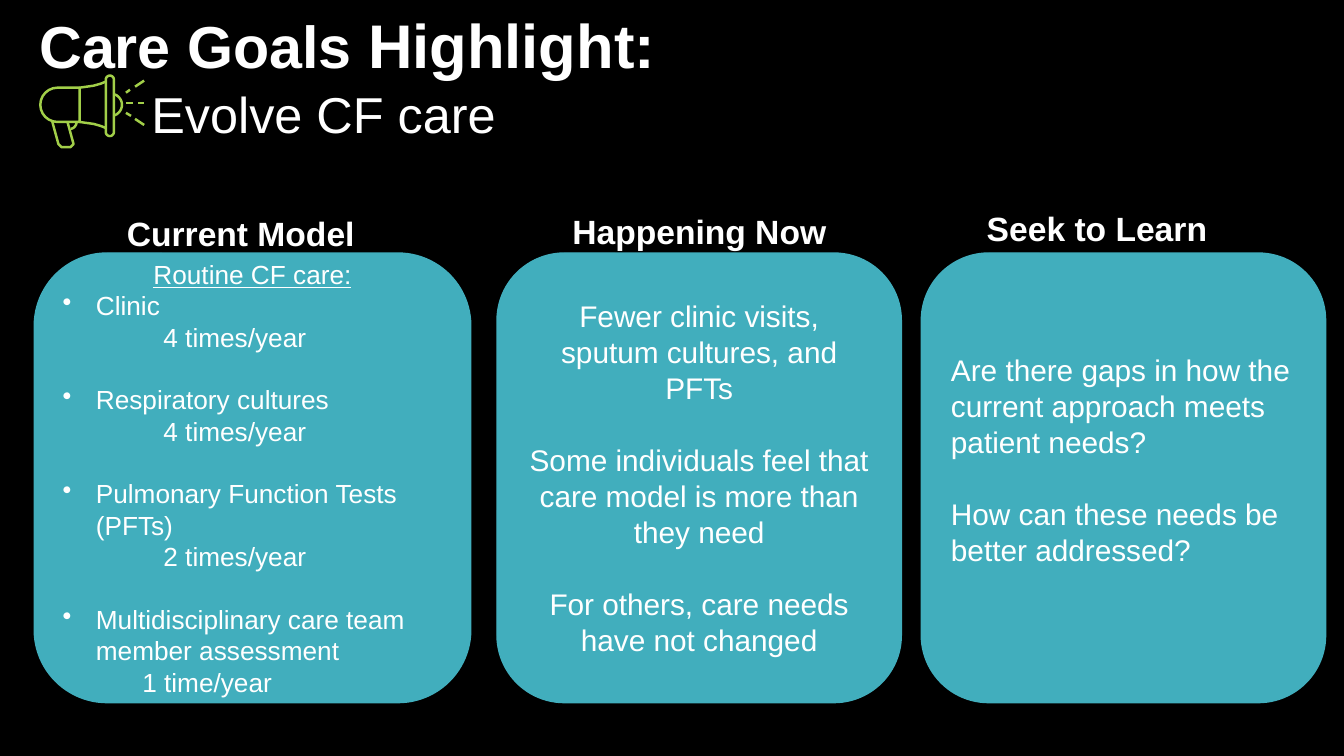
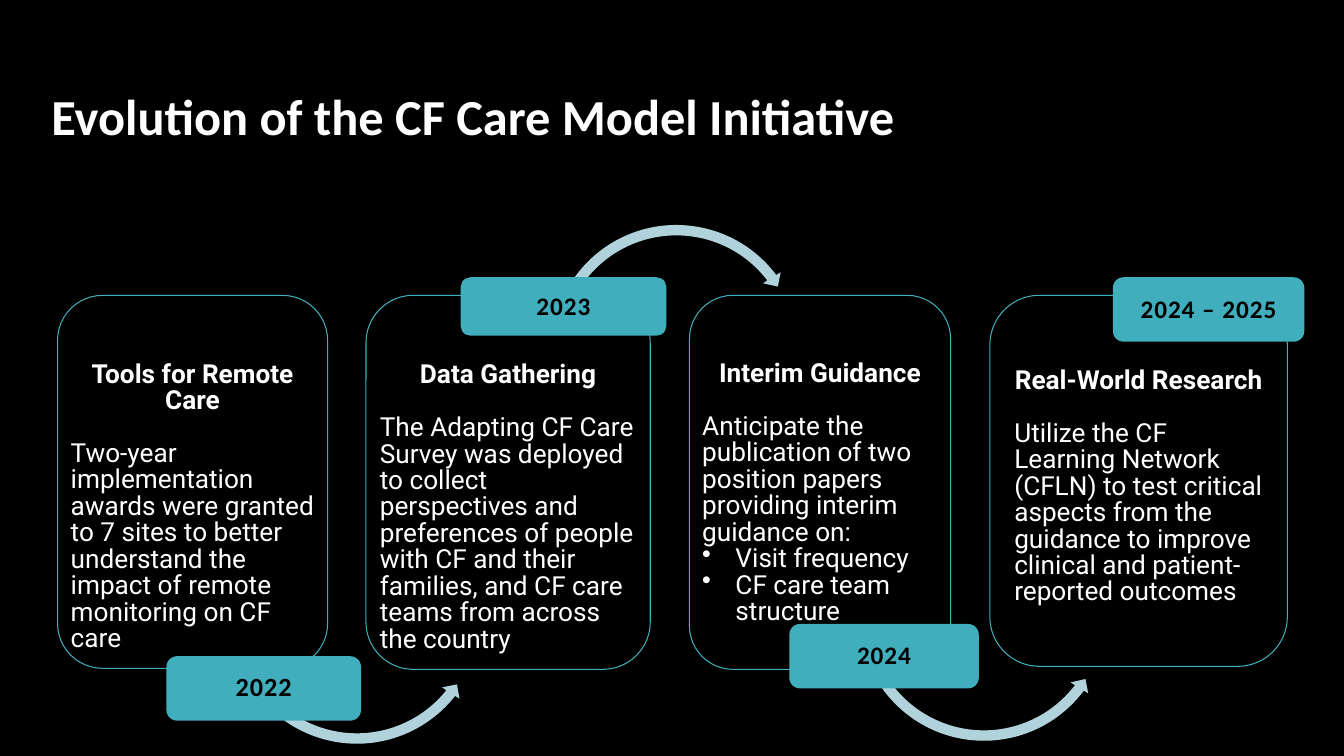
import math

from pptx import Presentation
from pptx import util as u
from pptx.dml import color
from pptx.enum import shapes, text
from pptx.oxml.xmlchemy import OxmlElement

# Shared look
colour = color.RGBColor.from_string
BLACK, WHITE, TEAL, MIST, LIME = "000000", "FFFFFF", "41AEBD", "B0D3DB", "A2CF49"
LEFT, CENTER = text.PP_ALIGN.LEFT, text.PP_ALIGN.CENTER
TOP, MIDDLE = text.MSO_ANCHOR.TOP, text.MSO_ANCHOR.MIDDLE
ROUNDED = shapes.MSO_SHAPE.ROUNDED_RECTANGLE
DEFAULT_INSETS, NO_INSETS = (0.1, 0.05, 0.1, 0.05), (0, 0, 0, 0)

deck = Presentation()
deck.slide_width, deck.slide_height = u.Inches(13.33), u.Inches(7.5)
backdrop = deck.slide_master.background.fill
backdrop.solid()
backdrop.fore_color.rgb = colour(BLACK)
title_only = deck.slide_layouts[5]


def place(shape, share, insets=DEFAULT_INSETS, anchor=TOP):
    """Put a shape at percentages of the slide and prepare its text frame."""
    left, top, width, height = share
    shape.left, shape.width = (int(deck.slide_width * n / 100) for n in (left, width))
    shape.top, shape.height = (int(deck.slide_height * n / 100) for n in (top, height))
    shape.shadow.inherit = False
    frame = shape.text_frame
    frame.word_wrap = True
    frame.auto_size = text.MSO_AUTO_SIZE.NONE
    frame.vertical_anchor = anchor
    (frame.margin_left, frame.margin_top,
     frame.margin_right, frame.margin_bottom) = (u.Inches(n) for n in insets)
    return frame


def write(frame, words, size, face="Arial", ink=WHITE, bold=False, underline=False,
          align=LEFT, pitch=None, gap=0, indent=0, bullet=False, para=None):
    """Add a span, in a new paragraph unless one is given."""
    if para is None:
        para = frame.add_paragraph() if frame.text else frame.paragraphs[0]
        para.alignment = align
        para.space_before = u.Pt(gap)
        if pitch:
            para.line_spacing = u.Pt(pitch)
        props = para._p.get_or_add_pPr()
        props.set("marL", str(u.Inches(indent)))
        props.set("indent", str(-u.Inches(indent) if bullet else 0))
        if bullet:
            mark = OxmlElement("a:buChar")
            mark.set("char", "•")
            props.append(mark)
    span = para.add_run()
    span.text = words
    span.font.size, span.font.name = u.Pt(size), face
    span.font.bold, span.font.underline = bold, underline
    span.font.color.rgb = colour(ink)
    return para


# Slide 1: title
page = deck.slides.add_slide(title_only)
frame = place(page.shapes.title, (2.93, 2.53, 86.25, 15.87), NO_INSETS)
first = write(frame, "Care Goals ", 42.3, bold=True, pitch=44.4)
write(frame, "Highlight:", 44, bold=True, para=first)
write(frame, "Evolve CF care", 36, pitch=44.4, indent=1.11)

# Megaphone: contours in inches, a five-number tuple is an arc (x, y, radius, from, to)
contours = [
    (True, [(0.79, 1.21), (0.57, 1.04, 0.17, 90, 270), (0.79, 0.87)]),
    (False, [(0.79, 0.87), (0.86, 0.86), (0.93, 0.85), (1, 0.83), (1.05, 0.81)]),
    (False, [(0.79, 1.21), (0.86, 1.22), (0.93, 1.23), (1, 1.25), (1.05, 1.27)]),
    (True, [(1.09, 0.79, 0.04, 180, 360), (1.09, 1.31, 0.04, 0, 180)]),
    (False, [(1.1, 1.04, 0.11, -70, 70)]),
    (False, [(0.52, 1.21), (0.58, 1.43), (0.61, 1.46), (0.7, 1.46), (0.73, 1.43), (0.67, 1.21)]),
    (False, [(0.69, 1.21, 0.07, 0, 80)]),
    (False, [(1.25, 0.92), (1.29, 0.89)]),
    (False, [(1.34, 0.86), (1.43, 0.8)]),
    (False, [(1.25, 1.02), (1.32, 1.02)]),
    (False, [(1.37, 1.02), (1.43, 1.02)]),
    (False, [(1.25, 1.12), (1.3, 1.15)]),
    (False, [(1.34, 1.18), (1.43, 1.24)]),
]
builder = None
for closed, parts in contours:
    points = []
    for part in parts:
        if len(part) == 2:
            points.append(part)
            continue
        x, y, radius, start, stop = part
        for step in range(13):
            angle = math.radians(start + (stop - start) * step / 12)
            points.append((x + radius * math.cos(angle), y + radius * math.sin(angle)))
    points = [(x * 1000, y * 1000) for x, y in points]
    if builder is None:
        builder = page.shapes.build_freeform(*points[0], scale=u.Inches(1) / 1000)
    else:
        builder.move_to(*points[0])
    builder.add_line_segments(points[1:], close=closed)
megaphone = builder.convert_to_shape()
megaphone.shadow.inherit = False
megaphone.fill.background()
megaphone.line.color.rgb = colour(LIME)
megaphone.line.width = u.Pt(1.75)

# Three columns: heading share, card left and width, insets, size, pitch, paragraphs
routine = [("Routine CF care:", dict(align=CENTER, underline=True))]
for number, (check, often, indent) in enumerate([
        ("Clinic", "4 times/year", 1),
        ("Respiratory cultures", "4 times/year", 1),
        ("Pulmonary Function Tests (PFTs)", "2 times/year", 1),
        ("Multidisciplinary care team member assessment", "1 time/year", 0.79)]):
    routine.append((check, dict(indent=0.33, bullet=True, gap=22.4 if number else 0)))
    routine.append((often, dict(indent=indent)))
now = [(words, dict(align=CENTER, gap=25.7 if number else 0)) for number, words in enumerate([
    "Fewer clinic visits, sputum cultures, and PFTs",
    "Some individuals feel that care model is more than they need",
    "For others, care needs have not changed"])]
learn = [
    ("Are there gaps in how the current approach meets patient needs?", {}),
    ("How can these needs be better addressed?", dict(gap=25.7)),
]
columns = [
    ("Current Model", (8.7, 27.47, 31.88, 6.67), 2.55, 32.48,
     (0.07, 0.03, 0.07, 0.03), 18.7, 22.4, routine),
    ("Happening Now", (41.85, 27.2, 24.75, 6.67), 36.98, 30.08,
     DEFAULT_INSETS, 21.3, 25.7, now),
    ("Seek to Learn", (72.68, 26.8, 22.58, 6.67), 68.55, 30.08,
     (0.1, 0.05, 0.1, 0.41), 21.3, 25.7, learn),
]
for heading, share, left, width, insets, size, pitch, lines in columns:
    card = page.shapes.add_shape(ROUNDED, 0, 0, 0, 0)
    card.fill.solid()
    card.fill.fore_color.rgb = card.line.color.rgb = colour(TEAL)
    card.line.width = u.Pt(1)
    frame = place(card, (left, 33.47, width, 59.47), insets, MIDDLE)
    for words, style in lines:
        write(frame, words, size, pitch=pitch, **style)
    label = page.shapes.add_textbox(0, 0, 0, 0)
    write(place(label, share), heading, 24, bold=True)

# Slide 2: title
page = deck.slides.add_slide(title_only)
frame = place(page.shapes.title, (3.83, 12, 71.85, 7.47), NO_INSETS)
write(frame, "Evolution of the CF Care Model Initiative", 36, "Calibri", bold=True, pitch=39.5)

# Curved arrows: left, top, rotation, flipped, head and tail angles
for left, top, turn, flipped, head, tail in [
        (40.65, 29.07, 5, True, 25.22, 89.78),
        (63.53, 64.27, 347.3, False, 29.81, 94.33),
        (16.88, 64.67, 356.3, False, 25.22, 89.78)]:
    arrow = page.shapes.add_shape(shapes.MSO_SHAPE.LEFT_CIRCULAR_ARROW, 0, 0, 0, 0)
    place(arrow, (left, top, 19.35, 34.4))
    arrow.rotation = turn
    if flipped:
        arrow.element.spPr.xfrm.set("flipV", "1")
    for index, value in enumerate((0.04, 3.09, head, tail, 0.04)):
        arrow.adjustments[index] = value
    arrow.fill.solid()
    arrow.fill.fore_color.rgb = colour(MIST)
    arrow.line.fill.background()

# Stage cards: left, width, height, insets, heading, body, bullets
stages = [
    (4.28, 20.1, 49.33, (0, 0.53, 0, 0), "Tools for Remote Care",
     "Two-year implementation awards were granted to 7 sites to better understand "
     "the impact of remote monitoring on CF care", []),
    (27.23, 21.15, 49.47, (0, 0.53, 0, 0), "Data Gathering",
     "The Adapting CF Care Survey was deployed to collect perspectives and preferences "
     "of people with CF and their families, and CF care teams from across the country", []),
    (51.3, 19.43, 49.47, (0, 0.53, 0, 0), "Interim Guidance",
     "Anticipate the publication of two position papers providing interim guidance on:",
     ["Visit frequency", "CF care team structure"]),
    (73.65, 22.13, 49.07, (0.1, 0.58, 0.1, 0.05), "Real-World Research",
     "Utilize the CF Learning Network (CFLN) to test critical aspects from the guidance "
     "to improve clinical and patient-reported outcomes", []),
]
for left, width, height, insets, heading, body, bullets in stages:
    card = page.shapes.add_shape(ROUNDED, 0, 0, 0, 0)
    card.fill.background()
    card.line.color.rgb = colour(TEAL)
    card.line.width = u.Pt(0.75)
    frame = place(card, (left, 39.07, width, height), insets)
    write(frame, heading, 18.7, "Roboto", bold=True, align=CENTER, pitch=18.9)
    write(frame, body, 18.7, "Roboto", pitch=18.9, gap=18.9)
    for words in bullets:
        write(frame, words, 18.7, "Roboto", pitch=18.9, indent=0.33, bullet=True)

# Year badges
for year, share, size in [
        ("2022", (12.38, 86.8, 14.48, 8.53), 18.7),
        ("2023", (34.28, 36.67, 15.3, 7.73), 18),
        ("2024", (58.73, 82.53, 14.1, 8.53), 18),
        ("2024 – 2025", (82.8, 36.67, 14.25, 8.53), 18)]:
    badge = page.shapes.add_shape(ROUNDED, 0, 0, 0, 0)
    badge.fill.solid()
    badge.fill.fore_color.rgb = colour(TEAL)
    badge.line.fill.background()
    frame = place(badge, share, NO_INSETS, MIDDLE)
    para = write(frame, year, size, "Calibri", BLACK, bold=True, align=CENTER, pitch=19.6)
    para.runs[0].font._element.set("spc", "70")

deck.save("out.pptx")
